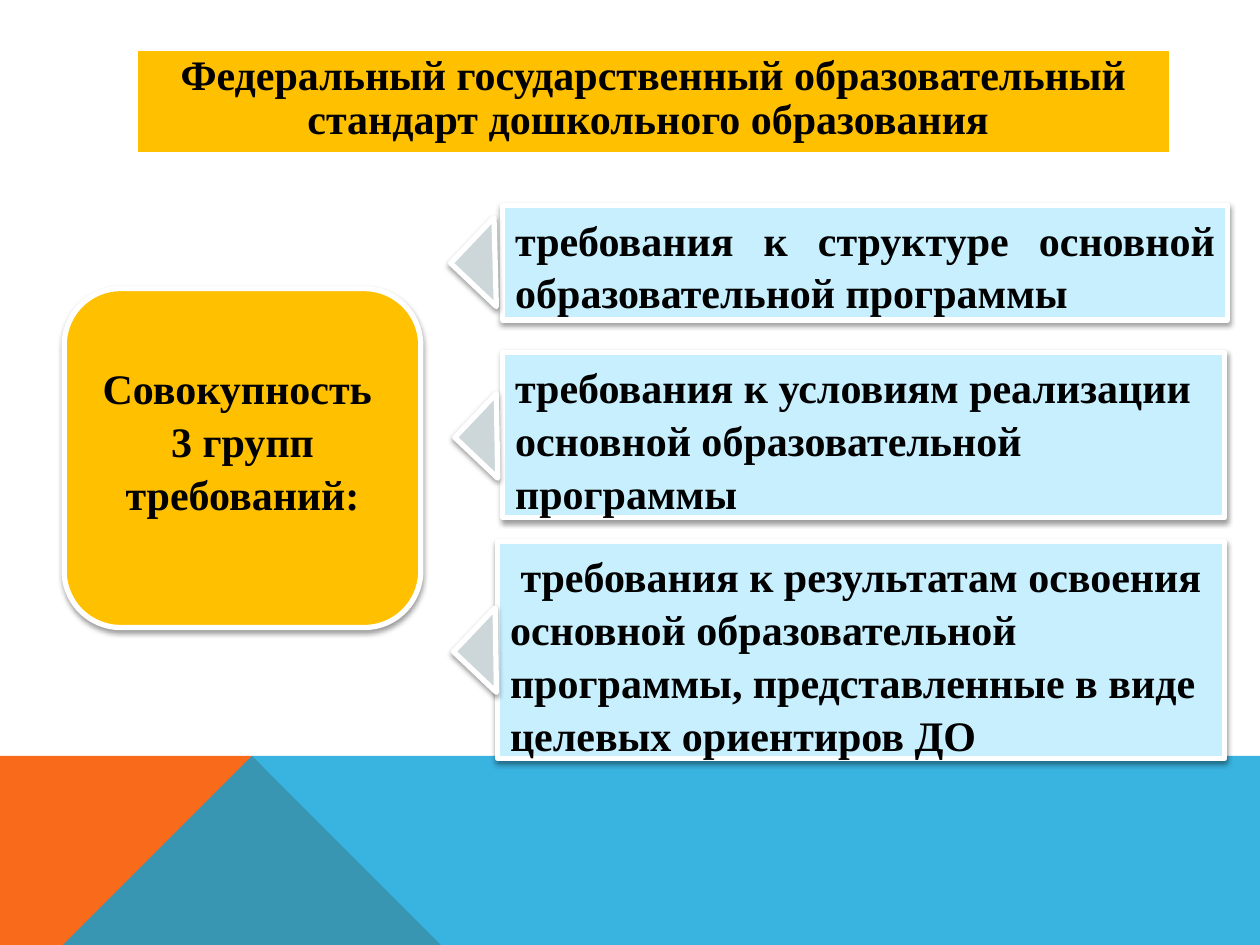
"""Build a slide on the three groups of standard requirements."""
import dataclasses
import typing

import lxml.etree
import pptx
import pptx.dml.color
import pptx.enum.shapes
import pptx.enum.text
import pptx.oxml.ns
import pptx.util

Inches = pptx.util.Inches
Pt = pptx.util.Pt
Shape = pptx.enum.shapes.MSO_SHAPE
Align = pptx.enum.text.PP_ALIGN
Anchor = pptx.enum.text.MSO_ANCHOR
qn = pptx.oxml.ns.qn

FONT = "Times New Roman"
GOLD = "FFC000"
SKY = "C8EFFD"
GREY = "CDD7D9"
WHITE = "FFFFFF"
BLACK = "000000"


@dataclasses.dataclass
class Box:
    """A rectangle as left, top, width and height in inches."""
    left: float
    top: float
    width: float
    height: float

    def place(self) -> tuple:
        """Give the four lengths."""
        return tuple(Inches(v) for v in dataclasses.astuple(self))


@dataclasses.dataclass
class Demand:
    """One group of requirements and its pointer."""
    box: Box
    tip: Box
    text: str
    align: typing.Any = Align.LEFT


DEMANDS = [
    Demand(Box(3.99, 1.63, 5.75, 0.91), Box(3.68, 1.83, 0.5, 0.5),
           "требования к структуре основной образовательной программы", Align.JUSTIFY),
    Demand(Box(3.99, 2.8, 5.73, 1.31), Box(3.71, 3.22, 0.47, 0.48),
           "требования к условиям реализации основной образовательной программы"),
    Demand(Box(3.95, 4.3, 5.77, 1.72), Box(3.7, 4.92, 0.47, 0.48),
           " требования к результатам освоения основной образовательной программы, "
           "представленные в виде целевых ориентиров ДО"),
]


def paint(fill: typing.Any, tint: str) -> None:
    """Make a fill solid in a hex colour."""
    fill.solid()
    fill.fore_color.rgb = pptx.dml.color.RGBColor.from_string(tint)


def shade(shape: typing.Any) -> None:
    """Cast a soft shadow downwards."""
    shape.shadow.inherit = False
    effects = shape._element.spPr.find(qn("a:effectLst"))
    outer = lxml.etree.SubElement(
        effects, qn("a:outerShdw"), blurRad=str(Pt(3.1)), dist=str(Pt(1.6)),
        dir="5400000", rotWithShape="0")
    tint = lxml.etree.SubElement(outer, qn("a:srgbClr"), val=BLACK)
    lxml.etree.SubElement(tint, qn("a:alpha"), val="38000")


def write(frame: typing.Any, text: str, align: typing.Any, space: float) -> None:
    """Set bold black text with one alignment and line spacing."""
    frame.text = text
    for para in frame.paragraphs:
        para.alignment = align
        para.line_spacing = space
        for run in para.runs:
            run.font.name = FONT
            run.font.size = Pt(24)
            run.font.bold = True
            paint(run.font.fill, BLACK)


def panel(slide: typing.Any, kind: typing.Any, box: Box, tint: str) -> typing.Any:
    """Draw a filled shape with a white edge and a shadow."""
    shape = slide.shapes.add_shape(kind, *box.place())
    paint(shape.fill, tint)
    paint(shape.line.fill, WHITE)
    shape.line.width = Pt(3)
    shade(shape)
    return shape


def patch(slide: typing.Any, points: list, tint: str, alpha: int = 100) -> None:
    """Draw a flat polygon through points in inches."""
    build = slide.shapes.build_freeform(*points[0], scale=Inches(1))
    build.add_line_segments(points[1:], close=True)
    shape = build.convert_to_shape()
    paint(shape.fill, tint)
    shape.line.fill.background()
    shape.shadow.inherit = False
    if alpha < 100:
        node = shape._element.spPr.find(".//" + qn("a:srgbClr"))
        lxml.etree.SubElement(node, qn("a:alpha"), val=str(alpha * 1000))


def title(slide: typing.Any, box: Box, text: str) -> None:
    """Draw the heading as a table of one cell."""
    table = slide.shapes.add_table(1, 1, *box.place()).table
    table.first_row = table.horz_banding = False
    cell = table.cell(0, 0)
    paint(cell.fill, GOLD)
    cell.margin_top = cell.margin_bottom = Inches(0.04)
    write(cell.text_frame, text, Align.CENTER, 0.95)


def group(slide: typing.Any, item: Demand) -> None:
    """Draw one group of requirements with its pointer."""
    shape = panel(slide, Shape.RECTANGLE, item.box, SKY)
    shape.text_frame.word_wrap = True
    shape.text_frame.vertical_anchor = Anchor.TOP
    write(shape.text_frame, item.text, item.align, 1.05)
    panel(slide, Shape.RIGHT_TRIANGLE, item.tip, GREY).rotation = 43.5


def main() -> None:
    """Build and save the slide."""
    deck = pptx.Presentation()
    deck.slide_width, deck.slide_height = Inches(10), Inches(7.5)
    slide = deck.slides.add_slide(deck.slide_layouts[6])
    patch(slide, [(0, 7.5), (0, 5.52), (2.23, 5.52), (3.91, 7.5)], "F96A1B")
    patch(slide, [(0, 7.5), (2.23, 5.52), (10, 5.52), (10, 7.5)], "08A1D9", 80)
    title(slide, Box(1.09, 0.4, 8.19, 0.81),
          "Федеральный государственный образовательный "
          "стандарт дошкольного образования ")
    hub = panel(slide, Shape.ROUNDED_RECTANGLE, Box(0.51, 2.29, 2.83, 2.69), GOLD)
    hub.text_frame.word_wrap = True
    hub.text_frame.vertical_anchor = Anchor.MIDDLE
    hub.text_frame.margin_bottom = Inches(0.35)
    write(hub.text_frame, "Совокупность \n3 групп требований:", Align.CENTER, 1.05)
    for item in DEMANDS:
        group(slide, item)
    deck.save("out.pptx")


if __name__ == "__main__":
    main()
